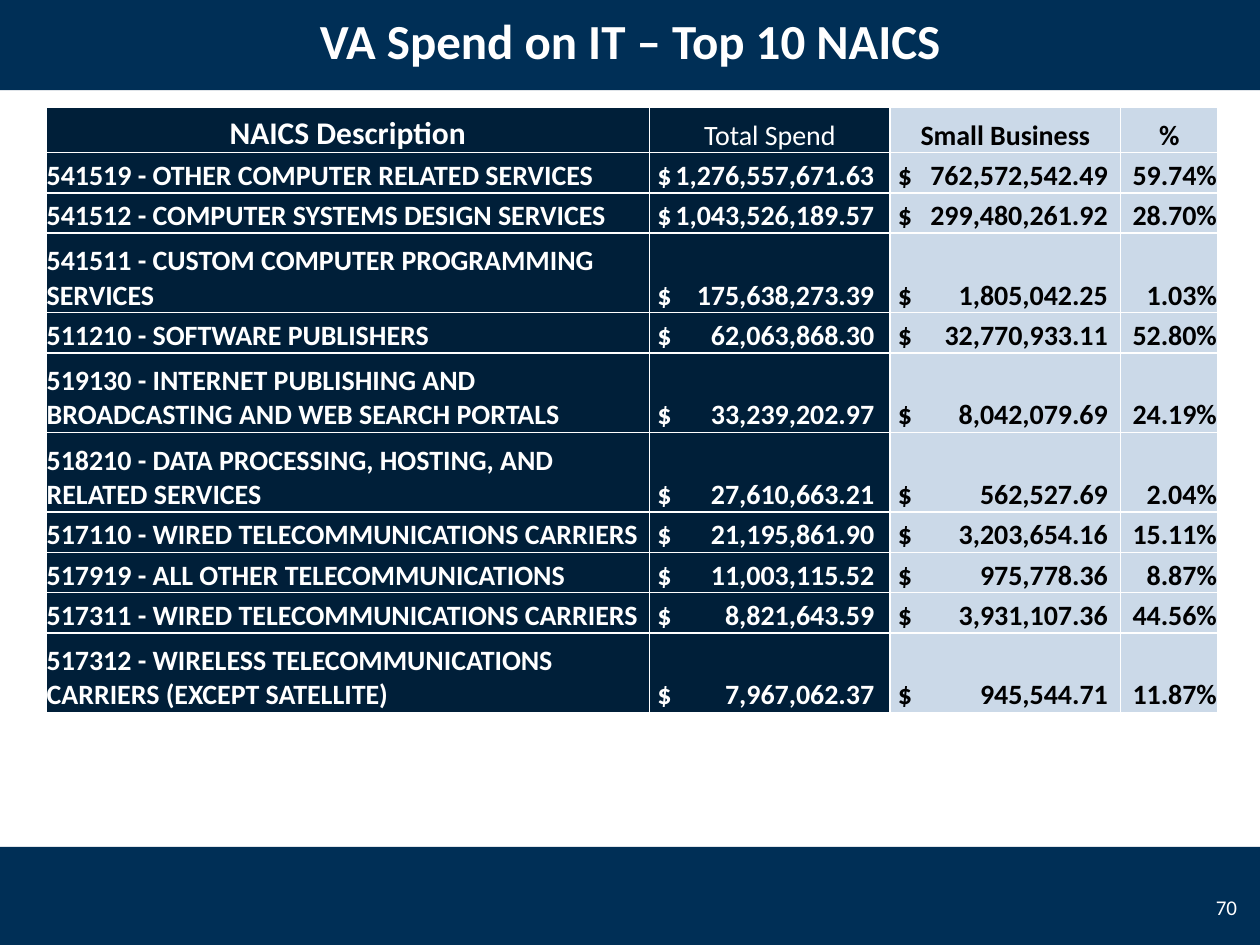
from lxml import etree
from pptx import Presentation
from pptx.dml.color import RGBColor
from pptx.enum import shapes, text
from pptx.oxml import ns
from pptx.util import Pt

theme = {
    "font": "Calibri", "bar": "002F56", "dark": "001F39", "pale": "CBD9E8",
    "white": "FFFFFF", "black": "000000",
    "title": 28, "head": 18, "body": 16, "page": 12,
}
left, center, right = text.PP_ALIGN.LEFT, text.PP_ALIGN.CENTER, text.PP_ALIGN.RIGHT


def write(frame, words, size, color, align, bold=True):
    para = frame.paragraphs[0]
    para.alignment = align
    run = para.add_run()
    run.text = words
    look = {"name": theme["font"], "size": Pt(theme[size]), "bold": bold}
    for key, value in look.items():
        setattr(run.font, key, value)
    run.font.color.rgb = RGBColor.from_string(theme[color])
    return para


def add(parent, tag, **attrs):
    return etree.SubElement(parent, ns.qn(tag), attrs)


prs = Presentation()
prs.slide_width, prs.slide_height = Pt(720), Pt(540)
slide = prs.slides.add_slide(prs.slide_layouts[5])

for top in (484, -6):
    bar = slide.shapes.add_shape(
        shapes.MSO_SHAPE.RECTANGLE, Pt(0), Pt(top), Pt(720), Pt(57.6))
    bar.shadow.inherit = False
    bar.fill.solid()
    bar.fill.fore_color.rgb = RGBColor.from_string(theme["bar"])
    bar.line.fill.background()

title = slide.shapes.title
page = slide.shapes.add_textbox(0, 0, 0, 0)
boxes = [
    (title, (0, -6, 720, 57.6), "VA Spend on IT – Top 10 NAICS", "title", center, True),
    (page, (684, 504, 30, 28.8), "70", "page", right, False),
]
for box, place, words, size, align, bold in boxes:
    for key, value in zip(("left", "top", "width", "height"), place):
        setattr(box, key, Pt(value))
    frame = box.text_frame
    frame.word_wrap = True
    frame.vertical_anchor = text.MSO_ANCHOR.MIDDLE
    write(frame, words, size, "white", align, bold)
slide.shapes._spTree.append(title._element)

heads = ["NAICS Description", "Total Spend", "Small Business", "%"]
data = [
    ("541519 - OTHER COMPUTER RELATED SERVICES", "1,276,557,671.63", "762,572,542.49", "59.74%"),
    ("541512 - COMPUTER SYSTEMS DESIGN SERVICES", "1,043,526,189.57", "299,480,261.92", "28.70%"),
    ("541511 - CUSTOM COMPUTER PROGRAMMING SERVICES", "175,638,273.39", "1,805,042.25", "1.03%"),
    ("511210 - SOFTWARE PUBLISHERS", "62,063,868.30", "32,770,933.11", "52.80%"),
    ("519130 - INTERNET PUBLISHING AND BROADCASTING AND WEB SEARCH PORTALS",
     "33,239,202.97", "8,042,079.69", "24.19%"),
    ("518210 - DATA PROCESSING, HOSTING, AND RELATED SERVICES",
     "27,610,663.21", "562,527.69", "2.04%"),
    ("517110 - WIRED TELECOMMUNICATIONS CARRIERS", "21,195,861.90", "3,203,654.16", "15.11%"),
    ("517919 - ALL OTHER TELECOMMUNICATIONS", "11,003,115.52", "975,778.36", "8.87%"),
    ("517311 - WIRED TELECOMMUNICATIONS CARRIERS", "8,821,643.59", "3,931,107.36", "44.56%"),
    ("517312 - WIRELESS TELECOMMUNICATIONS CARRIERS (EXCEPT SATELLITE)",
     "7,967,062.37", "945,544.71", "11.87%"),
]
widths = [345, 137.5, 131.75, 55.5]
stops = {1: 124, 2: 120}
rows = [heads, *data]
tall = [25.7] + [45.5 if len(row[0]) > 42 else 23 for row in data]

table = slide.shapes.add_table(
    len(rows), len(heads), Pt(26.2), Pt(61.5), Pt(sum(widths)), Pt(sum(tall))).table
table.horz_banding = False
for col, width in zip(table.columns, widths):
    col.width = Pt(width)
for row, height in zip(table.rows, tall):
    row.height = Pt(height)

for r, row in enumerate(rows):
    for c, words in enumerate(row):
        cell = table.cell(r, c)
        money = r > 0 and c in stops
        form = {
            "margin_left": Pt(4.5 if money else 0.5), "margin_right": Pt(0.5),
            "margin_top": Pt(0.5), "margin_bottom": Pt(0),
            "vertical_anchor": text.MSO_ANCHOR.BOTTOM,
        }
        for key, value in form.items():
            setattr(cell, key, value)
        props = cell._tc.get_or_add_tcPr()
        for side in ("a:lnL", "a:lnR", "a:lnT", "a:lnB"):
            line = add(props, side, w=str(Pt(1)))
            add(add(line, "a:solidFill"), "a:srgbClr", val=theme["white"])
        cell.fill.solid()
        cell.fill.fore_color.rgb = RGBColor.from_string(theme["dark" if c < 2 else "pale"])
        size = "head" if r == c == 0 else "body"
        align = center if r == 0 else right if c == 3 else left
        para = write(cell.text_frame, f"$\t{words}" if money else words, size,
                     "white" if c < 2 else "black", align, (r, c) != (0, 1))
        if money:
            tabs = add(para._p.get_or_add_pPr(), "a:tabLst")
            add(tabs, "a:tab", pos=str(Pt(stops[c])), algn="r")

prs.save("out.pptx")
